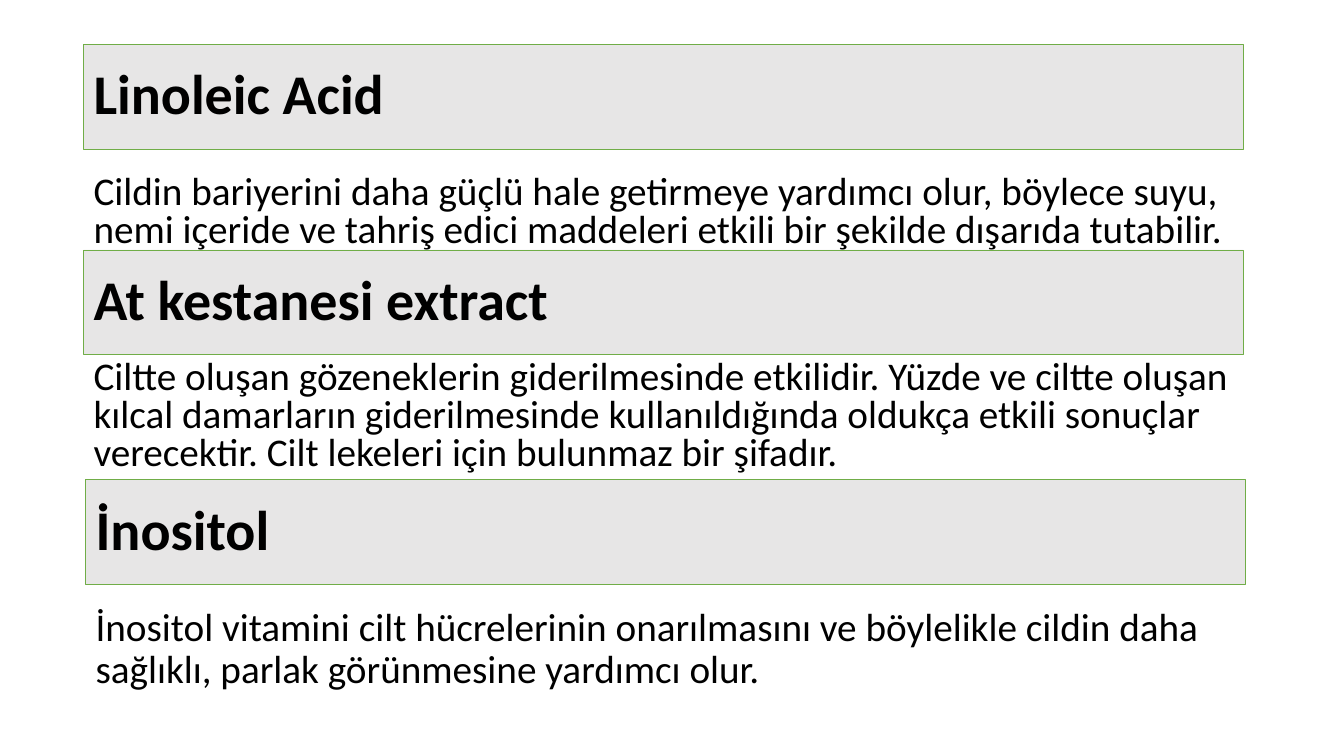
from pptx import Presentation
from pptx.dml.color import RGBColor
from pptx.enum.shapes import MSO_SHAPE as Shape
from pptx.enum.text import MSO_ANCHOR as Anchor, PP_ALIGN as Align
from pptx.util import Pt

PX = 9144
WIDTH, HEIGHT = 1333, 750
BAR = 104
BLACK = RGBColor(0x00, 0x00, 0x00)
GRAY = RGBColor(0xE7, 0xE6, 0xE6)
GREEN = RGBColor(0x70, 0xAD, 0x47)

HEAD = {"size": Pt(40), "bold": True, "name": "Calibri"}
BODY = {"size": Pt(28), "bold": False, "name": "Calibri"}

TOPICS = [
    ((83, 44, 1150, 216), 125, 0.8, "Linoleic Acid",
     "Cildin bariyerini daha güçlü hale getirmeye yardımcı olur, böylece suyu, "
     "nemi içeride ve tahriş edici maddeleri etkili bir şekilde dışarıda tutabilir."),
    ((83, 248, 1150, 237), 105, 0.8, "At kestanesi extract",
     "Ciltte oluşan gözeneklerin giderilmesinde etkilidir. Yüzde ve ciltte oluşan "
     "kılcal damarların giderilmesinde kullanıldığında oldukça etkili sonuçlar "
     "verecektir. Cilt lekeleri için bulunmaz bir şifadır."),
    ((85, 476, 1150, 205), 122, 0.9, "İnositol",
     "İnositol vitamini cilt hücrelerinin onarılmasını ve böylelikle cildin daha "
     "sağlıklı, parlak görünmesine yardımcı olur."),
]


def scale(*sizes):
    return [size * PX for size in sizes]


def write(shape, text, font, layout, anchor):
    frame = shape.text_frame
    frame.word_wrap = True
    frame.vertical_anchor = anchor
    para = frame.paragraphs[0]
    for key, value in layout.items():
        setattr(para, key, value)
    run = para.add_run()
    run.text = text
    for key, value in font.items():
        setattr(run.font, key, value)
    run.font.color.rgb = BLACK


def add_topic(slide, box, drop, pitch, title, text):
    left, top, width, height = box
    bar = slide.shapes.add_shape(Shape.RECTANGLE, *scale(left, top, width, BAR))
    bar.shadow.inherit = False
    bar.fill.solid()
    bar.fill.fore_color.rgb = GRAY
    bar.line.color.rgb = GREEN
    bar.line.width = Pt(0.5)
    write(bar, title, HEAD, {"alignment": Align.LEFT, "line_spacing": 0.9}, Anchor.MIDDLE)

    note = slide.shapes.add_textbox(*scale(left, top + drop, width, height - drop))
    layout = {"alignment": Align.LEFT, "line_spacing": pitch, "space_before": Pt(10)}
    write(note, text, BODY, layout, Anchor.TOP)


def main():
    deck = Presentation()
    deck.slide_width, deck.slide_height = scale(WIDTH, HEIGHT)
    slide = deck.slides.add_slide(deck.slide_layouts[6])
    for topic in TOPICS:
        add_topic(slide, *topic)
    deck.save("out.pptx")


if __name__ == "__main__":
    main()
